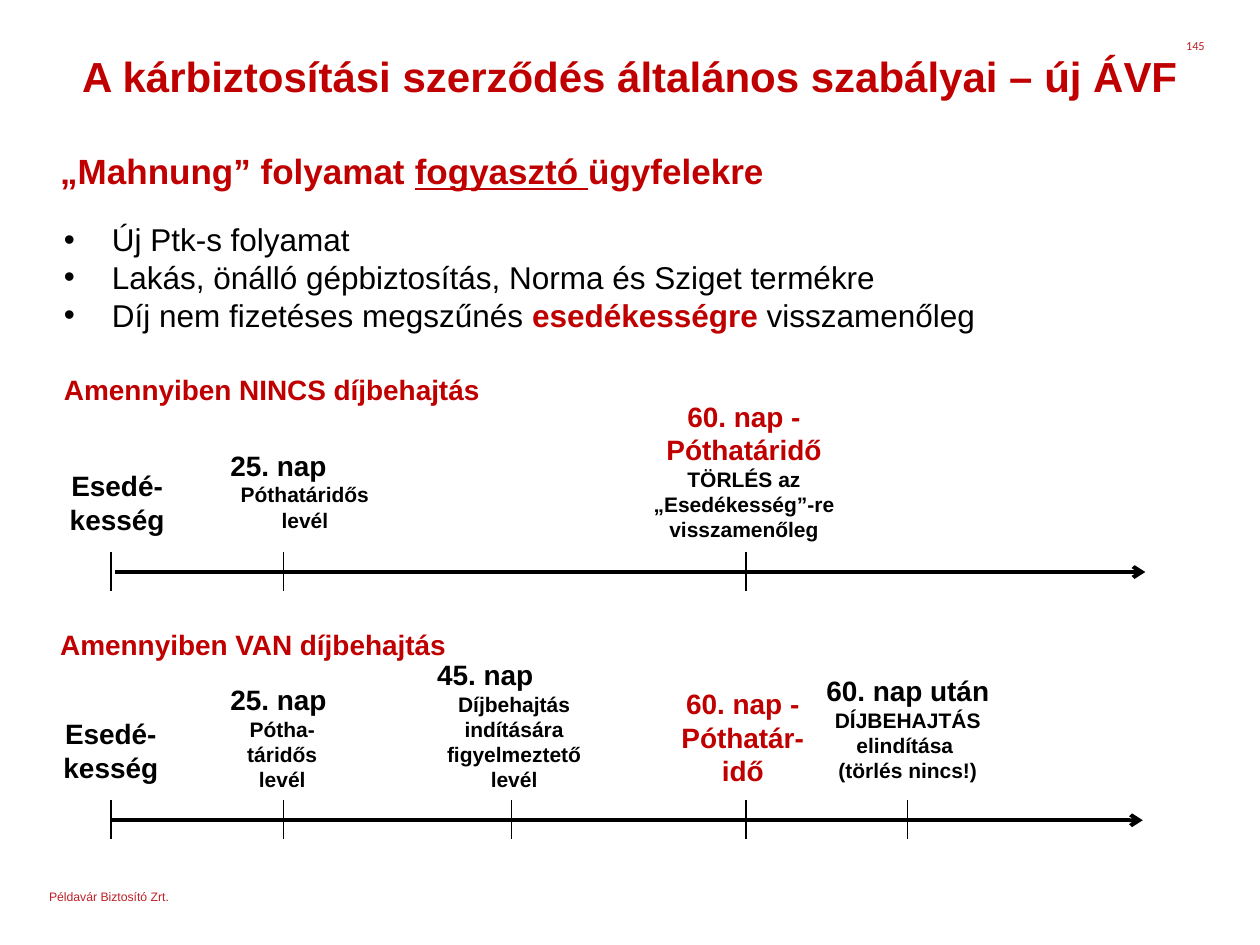
from lxml.etree import SubElement
from pptx import Presentation
from pptx.dml.color import RGBColor
from pptx.enum.shapes import MSO_CONNECTOR
from pptx.enum.text import MSO_ANCHOR as Anchor, PP_ALIGN as Align
from pptx.oxml.ns import qn
from pptx.util import Inches, Pt

COLORS = {"red": "C00000", "black": "000000", "small_print": "BD2027"}


def add_run(paragraph, text, size, color="black", bold=False, underline=None, font="Arial"):
    run = paragraph.add_run()
    run.text = text
    run.font.name = font
    run.font.size = Pt(size)
    run.font.bold = bold
    run.font.underline = underline
    run.font.color.rgb = RGBColor.from_string(COLORS[color])


def add_frame(slide, box, anchor=Anchor.TOP, margins=True):
    frame = slide.shapes.add_textbox(*map(Inches, box)).text_frame
    frame.word_wrap = True
    frame.vertical_anchor = anchor
    if not margins:
        frame.margin_left = frame.margin_right = 0
        frame.margin_top = frame.margin_bottom = 0
    return frame


def add_heading(slide, box, size, runs, align=Align.LEFT):
    """Place a red heading from (text, underline) runs."""
    heading = add_frame(slide, box, Anchor.MIDDLE).paragraphs[0]
    heading.alignment = align
    heading.line_spacing = Pt(22)
    for text, underline in runs:
        add_run(heading, text, size, "red", bold=True, underline=underline)


def add_small_print(slide, box, text, font, align=Align.LEFT):
    line = add_frame(slide, box, margins=False).paragraphs[0]
    line.alignment = align
    add_run(line, text, 7, "small_print", font=font)


def add_bullets(slide, box, items):
    """Each item is a list of (text, emphasised) runs."""
    frame = add_frame(slide, box)
    for index, item in enumerate(items):
        bullet = frame.add_paragraph() if index else frame.paragraphs[0]
        properties = bullet._p.get_or_add_pPr()
        properties.set("marL", str(Inches(0.38)))
        properties.set("indent", str(-Inches(0.38)))
        SubElement(properties, qn("a:buFont")).set("typeface", "Arial")
        SubElement(properties, qn("a:buChar")).set("char", "•")
        for text, emphasised in item:
            add_run(bullet, text, 18, "red" if emphasised else "black", emphasised)


def add_line(slide, start, end, width, arrow=False):
    line = slide.shapes.add_connector(
        MSO_CONNECTOR.STRAIGHT, *map(Inches, (*start, *end)))
    line.line.width = Pt(width)
    line.line.color.rgb = RGBColor.from_string(COLORS["black"])
    if arrow:
        SubElement(line.line._get_or_add_ln(), qn("a:tailEnd")).set("type", "arrow")
    SubElement(line._element.spPr, qn("a:effectLst"))


def add_milestone(slide, box, day, details=(), color="black", day_align=Align.CENTER):
    frame = add_frame(slide, box)
    frame.paragraphs[0].alignment = day_align
    add_run(frame.paragraphs[0], day, 16, color, bold=True)
    for detail in details:
        paragraph = frame.add_paragraph()
        paragraph.alignment = Align.CENTER
        add_run(paragraph, detail, 12, bold=True)


def add_timeline(slide, box, caption, caption_left, axis_start, ticks, milestones):
    """Milestone boxes are offset from the top of the timeline's box."""
    left, top, width, height = box
    axis_y = top + height - 0.15
    add_milestone(slide, (caption_left, top, 3.67, 0.37), caption,
                  color="red", day_align=Align.LEFT)
    add_line(slide, (axis_start, axis_y), (left + width, axis_y), 2.25, arrow=True)
    for x in ticks:
        add_line(slide, (x, axis_y - 0.16), (x, axis_y + 0.15), 0.75)
    for (x, offset, w, h), *content in milestones:
        add_milestone(slide, (x, top + offset, w, h), *content)


def main():
    deck = Presentation()
    deck.slide_width, deck.slide_height = Inches(10), Inches(7.5)
    slide = deck.slides.add_slide(deck.slide_layouts[6])

    add_small_print(slide, (9.34, 0.3, 0.22, 0.2), "145", "Calibri", Align.RIGHT)
    add_small_print(slide, (0.39, 7.06, 1.23, 0.13), "Példavár Biztosító Zrt.", "Arial")
    add_heading(slide, (0.5, 0.3, 9, 0.69), 24,
                [("A kárbiztosítási szerződés általános szabályai – új ÁVF", None)],
                Align.CENTER)
    add_heading(slide, (0.38, 1.24, 9.17, 0.26), 20,
                [("„Mahnung” folyamat ", None), ("fogyasztó ", True),
                 ("ügyfelekre", None)])
    add_bullets(slide, (0.41, 1.7, 9.17, 1.1), [
        [("Új Ptk-s folyamat", False)],
        [("Lakás, önálló gépbiztosítás, Norma és Sziget termékre", False)],
        [("Díj nem fizetéses megszűnés ", False), ("esedékességre", True),
         (" visszamenőleg", False)],
    ])

    due, first_letter, warning, deadline, collection = 0.88, 2.25, 4.06, 5.92, 7.2
    add_timeline(
        slide, (due, 2.91, 8.21, 1.78), "Amennyiben NINCS díjbehajtás", 0.41, 0.91,
        [due, first_letter, deadline],
        [((0.38, 0.76, 1.1, 0.64), "Esedé-kesség"),
         ((1.73, 0.6, 1.38, 0.77), "25. nap", ["Póthatáridős levél"], "black", Align.LEFT),
         ((5, 0.21, 1.81, 1.25), "60. nap - Póthatáridő",
          ["TÖRLÉS az „Esedékesség”-re visszamenőleg"], "red")])
    add_timeline(
        slide, (due, 4.93, 8.19, 1.73), "Amennyiben VAN díjbehajtás", 0.38, due,
        [due, first_letter, warning, deadline, collection],
        [((0.33, 0.71, 1.1, 0.64), "Esedé-kesség"),
         ((1.73, 0.44, 1.02, 0.98), "25. nap", ["Pótha-táridős levél"],
          "black", Align.LEFT),
         ((3.37, 0.24, 1.42, 1.18), "45. nap",
          ["Díjbehajtás indítására figyelmeztető levél"], "black", Align.LEFT),
         ((5.3, 0.47, 1.19, 1.11), "60. nap - Póthatár-idő", [], "red"),
         ((6.42, 0.37, 1.57, 0.98), "60. nap után",
          ["DÍJBEHAJTÁS elindítása ", "(törlés nincs!)"])])

    deck.save("out.pptx")


if __name__ == "__main__":
    main()
